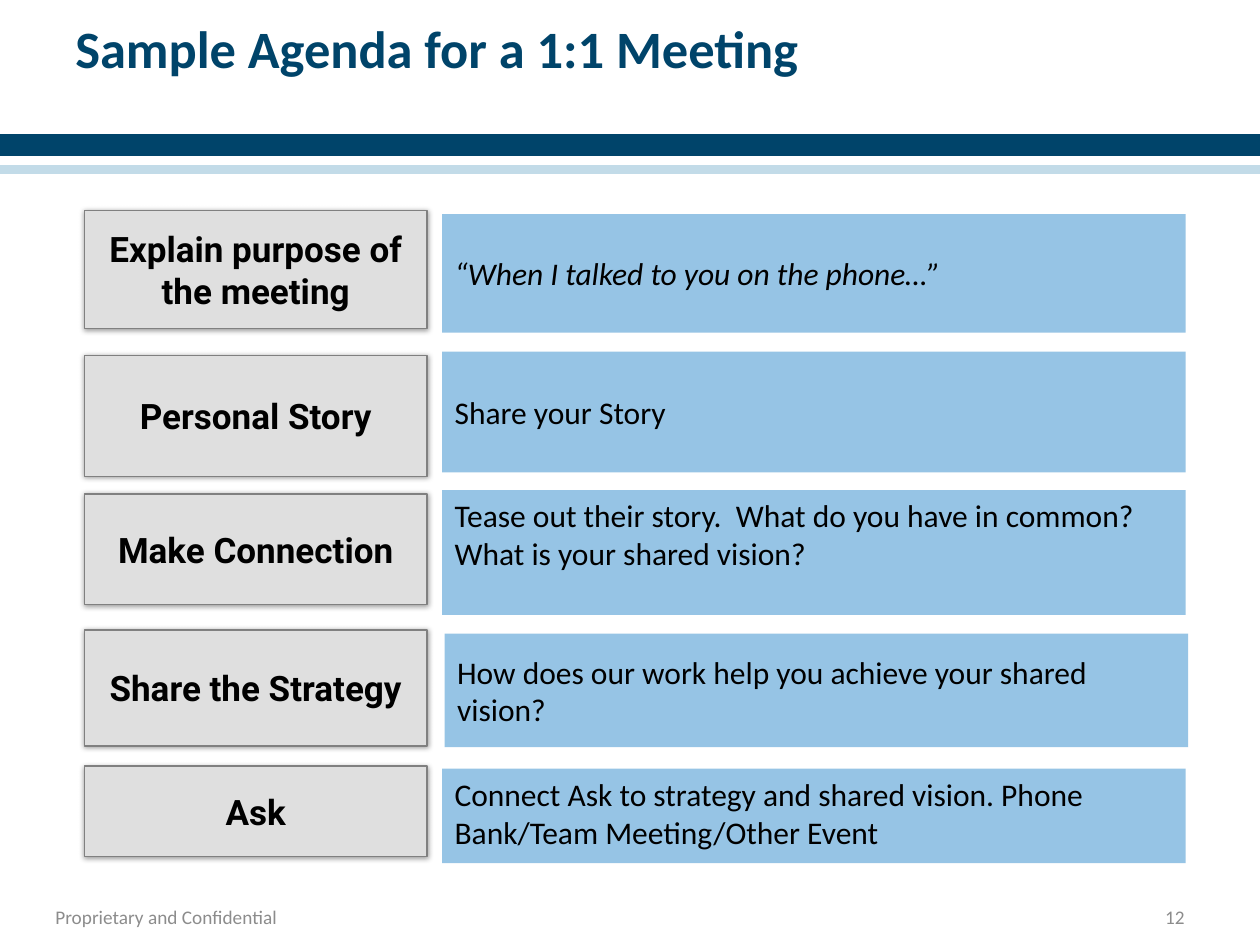
from dataclasses import dataclass

from lxml.etree import SubElement
from pptx import Presentation
from pptx.dml.color import RGBColor
from pptx.enum.shapes import MSO_SHAPE
from pptx.enum.text import MSO_ANCHOR, PP_ALIGN
from pptx.oxml.ns import qn
from pptx.util import Inches, Pt

CELL = 0.1  # the slide is a grid of 100 columns by 75 rows


@dataclass(frozen=True)
class Theme:
    navy: str = "00446A"
    white: str = "FFFFFF"
    pale_blue: str = "C2DBE8"
    blue: str = "0070C0"
    blue_opacity: int = 41
    gray: str = "DFDFDF"
    outline: str = "808080"
    muted: str = "8C8C8C"
    black: str = "000000"
    body_font: str = "Calibri"
    label_font: str = "Roboto"
    title_size: int = 30
    label_size: int = 20
    detail_size: int = 18
    footer_size: int = 11


THEME = Theme()


@dataclass(frozen=True)
class Box:
    """A rectangle in grid columns and rows."""
    left: float
    top: float
    width: float
    height: float

    def inside(self, left, top, width, height):
        return Box(self.left + left, self.top + top, width, height)

    def lengths(self):
        return [Inches(value * CELL)
                for value in (self.left, self.top, self.width, self.height)]


@dataclass(frozen=True)
class Step:
    """An agenda step; each span is (top, height) in rows of the agenda."""
    label: str
    detail: str
    label_span: tuple
    detail_span: tuple
    italic: bool = False
    anchor: MSO_ANCHOR = MSO_ANCHOR.MIDDLE
    shift: float = 0


STEPS = [
    Step("Explain purpose of the meeting", "“When I talked to you on the phone…”",
         (0, 9.4), (0.3, 9.4), italic=True),
    Step("Personal Story", "Share your Story", (11.5, 9.6), (11.2, 9.6)),
    Step("Make Connection",
         "Tease out their story.  What do you have in common? "
         "What is your shared vision?",
         (22.5, 8.8), (22.2, 9.9), anchor=MSO_ANCHOR.TOP),
    Step("Share the Strategy",
         "How does our work help you achieve your shared vision?",
         (33.3, 9.2), (33.6, 9), shift=0.2),
    Step("Ask",
         "Connect Ask to strategy and shared vision. "
         "Phone Bank/Team Meeting/Other Event",
         (44.1, 7.2), (44.3, 7.5), anchor=MSO_ANCHOR.TOP),
]


def write_text(shape, text, *, size, color=THEME.black, font=THEME.body_font,
               bold=False, italic=False, align=PP_ALIGN.LEFT,
               anchor=MSO_ANCHOR.MIDDLE):
    frame = shape.text_frame
    frame.word_wrap = True
    frame.vertical_anchor = anchor
    paragraph = frame.paragraphs[0]
    paragraph.alignment = align
    run = paragraph.add_run()
    run.text = text
    run.font.name = font
    run.font.size = Pt(size)
    run.font.bold = bold
    run.font.italic = italic
    run.font.color.rgb = RGBColor.from_string(color)
    return frame


def add_text(slide, box, text, **text_format):
    return write_text(slide.shapes.add_textbox(*box.lengths()), text, **text_format)


def add_rectangle(slide, box, fill, line=None, line_width=0.75):
    shape = slide.shapes.add_shape(MSO_SHAPE.RECTANGLE, *box.lengths())
    shape.shadow.inherit = False
    shape.fill.solid()
    shape.fill.fore_color.rgb = RGBColor.from_string(fill)
    if line:
        shape.line.color.rgb = RGBColor.from_string(line)
        shape.line.width = Pt(line_width)
    else:
        shape.line.fill.background()
    return shape


def set_opacity(color_element, percent):
    SubElement(color_element, qn("a:alpha")).set("val", str(percent * 1000))


def add_soft_shadow(shape):
    effects = shape._element.spPr.find(qn("a:effectLst"))
    shadow = SubElement(effects, qn("a:outerShdw"), blurRad=str(Pt(3)),
                        dist=str(Pt(0.5)), dir="5400000", rotWithShape="0")
    color = SubElement(shadow, qn("a:srgbClr"), val=THEME.black)
    set_opacity(color, 38)


def add_header(slide, box):
    # Bands across the full width, the white one parting the two blues
    for top, height, color in ((10.8, 2.5, THEME.navy), (12.5, 0.5, THEME.white),
                               (13.2, 0.5, THEME.pale_blue)):
        add_rectangle(slide, box.inside(0, top, box.width, height),
                      color, line=color, line_width=2)
    # Title
    add_text(slide, box.inside(5, 0.8, box.width - 10, 10),
             "Sample Agenda for a 1:1 Meeting", size=THEME.title_size,
             color=THEME.navy, bold=True, anchor=MSO_ANCHOR.TOP)


def add_agenda(slide, box):
    label_width, detail_left, detail_width = 27.2, 28.4, 59
    for step in STEPS:
        # Step name
        top, height = step.label_span
        label = add_rectangle(slide, box.inside(0, top, label_width, height),
                              THEME.gray, line=THEME.outline)
        add_soft_shadow(label)
        write_text(label, step.label, size=THEME.label_size,
                   font=THEME.label_font, bold=True, align=PP_ALIGN.CENTER)
        # What to say
        top, height = step.detail_span
        detail = add_rectangle(
            slide, box.inside(detail_left + step.shift, top, detail_width, height),
            THEME.blue)
        fill_color = detail._element.spPr.find(qn("a:solidFill"))[0]
        set_opacity(fill_color, THEME.blue_opacity)
        write_text(detail, step.detail, size=THEME.detail_size,
                   italic=step.italic, anchor=step.anchor)


def add_footer(slide, box):
    style = {"size": THEME.footer_size, "color": THEME.muted}
    notice = add_text(slide, box.inside(0, 0, 25.7, box.height),
                      "Proprietary and Confidential", **style)
    notice.margin_left = notice.margin_right = Inches(0.11)
    number_width = 23.3
    add_text(slide, box.inside(box.width - number_width, 0, number_width, box.height),
             "12", align=PP_ALIGN.RIGHT, **style)


def main():
    presentation = Presentation()
    presentation.slide_width = Inches(10)
    presentation.slide_height = Inches(7.5)
    slide = presentation.slides.add_slide(presentation.slide_layouts[6])
    add_header(slide, Box(0, 0, 100, 13.7))
    add_agenda(slide, Box(6.7, 16.7, 87.4, 51.8))
    add_footer(slide, Box(3.3, 71, 91.7, 3.5))
    presentation.save("out.pptx")


if __name__ == "__main__":
    main()
